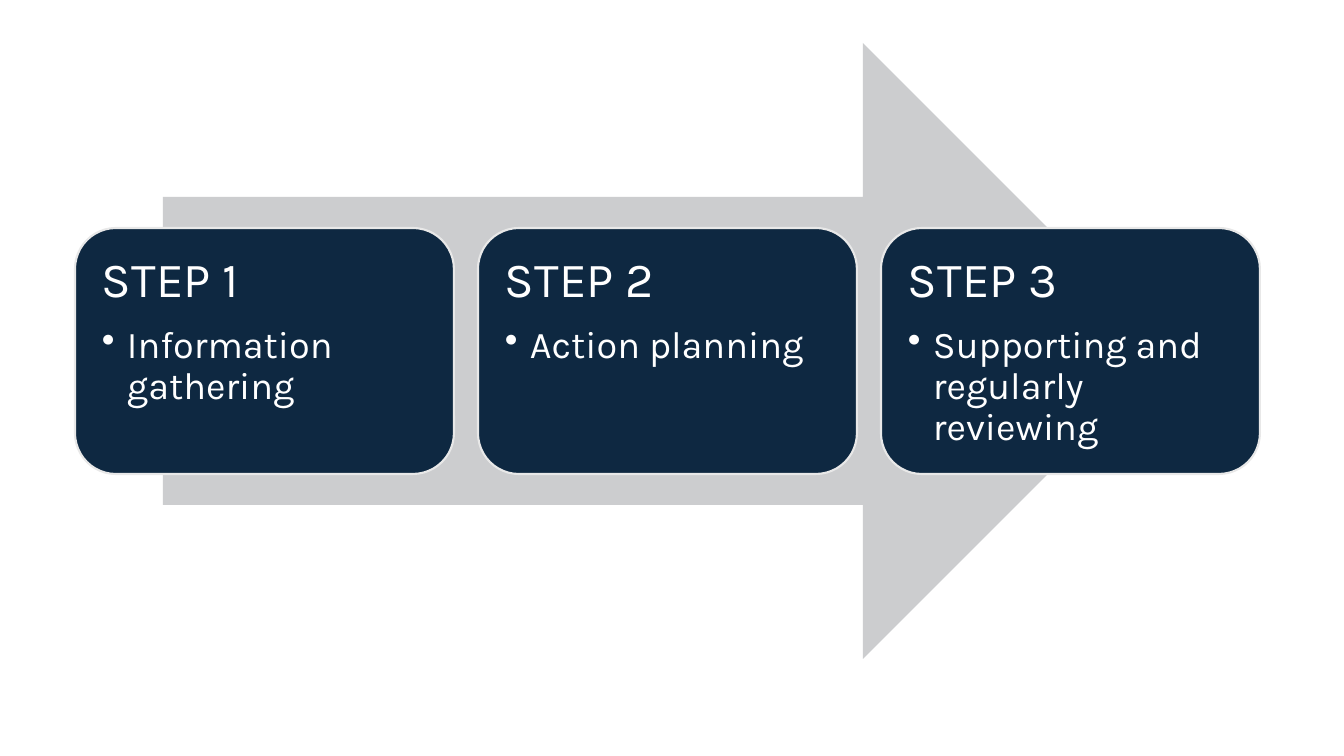
from pptx import Presentation
from pptx.dml.color import RGBColor as RGB
from pptx.enum.shapes import MSO_SHAPE as SHAPE
from pptx.enum.text import MSO_ANCHOR as ANCHOR, PP_ALIGN as ALIGN
from pptx.oxml.ns import qn
from pptx.util import Pt
from lxml.etree import SubElement

PX = 914400 / 100.8
COLORS = {"navy": "0E2841", "gray": "CCCDCF", "edge": "E8E8E8", "white": "FFFFFF"}


def px(n):
    return round(n * PX)


def write(para, text, size=27, color="white", font="Karla", after=0, bullet=False):
    para.alignment = ALIGN.LEFT
    para.line_spacing = 0.9
    para.space_after = Pt(after)
    run = para.add_run()
    run.text = text
    run.font.name = font
    run.font.size = Pt(size)
    run.font.color.rgb = RGB.from_string(COLORS[color])
    if bullet:
        props = para._p.get_or_add_pPr()
        props.set("marL", str(px(25)))
        props.set("indent", str(-px(25)))
        SubElement(props, qn("a:buChar"), char="•")


prs = Presentation()
prs.slide_width, prs.slide_height = px(1344), px(756)
slide = prs.slides.add_slide(prs.slide_layouts[6])

# Arrow behind the steps
arrow = slide.shapes.add_shape(SHAPE.RIGHT_ARROW, px(163), px(43), px(1008), px(616))
arrow.shadow.inherit = False
arrow.fill.solid()
arrow.fill.fore_color.rgb = RGB.from_string(COLORS["gray"])
arrow.line.fill.background()

# Step cards, evenly spaced
steps = ["Information gathering", "Action planning", "Supporting and regularly reviewing"]
for i, task in enumerate(steps):
    card = slide.shapes.add_shape(
        SHAPE.ROUNDED_RECTANGLE, px(75 + 403 * i), px(228), px(379), px(246))
    card.shadow.inherit = False
    card.fill.solid()
    card.fill.fore_color.rgb = RGB.from_string(COLORS["navy"])
    card.line.color.rgb = RGB.from_string(COLORS["edge"])
    card.line.width = Pt(1.5)

    frame = card.text_frame
    frame.word_wrap = True
    frame.vertical_anchor = ANCHOR.TOP
    frame.margin_left = frame.margin_right = px(15)
    frame.margin_top = frame.margin_bottom = px(15)
    write(frame.paragraphs[0], f"STEP {i + 1}", size=35, after=13)
    write(frame.add_paragraph(), task, bullet=True)

prs.save("out.pptx")
